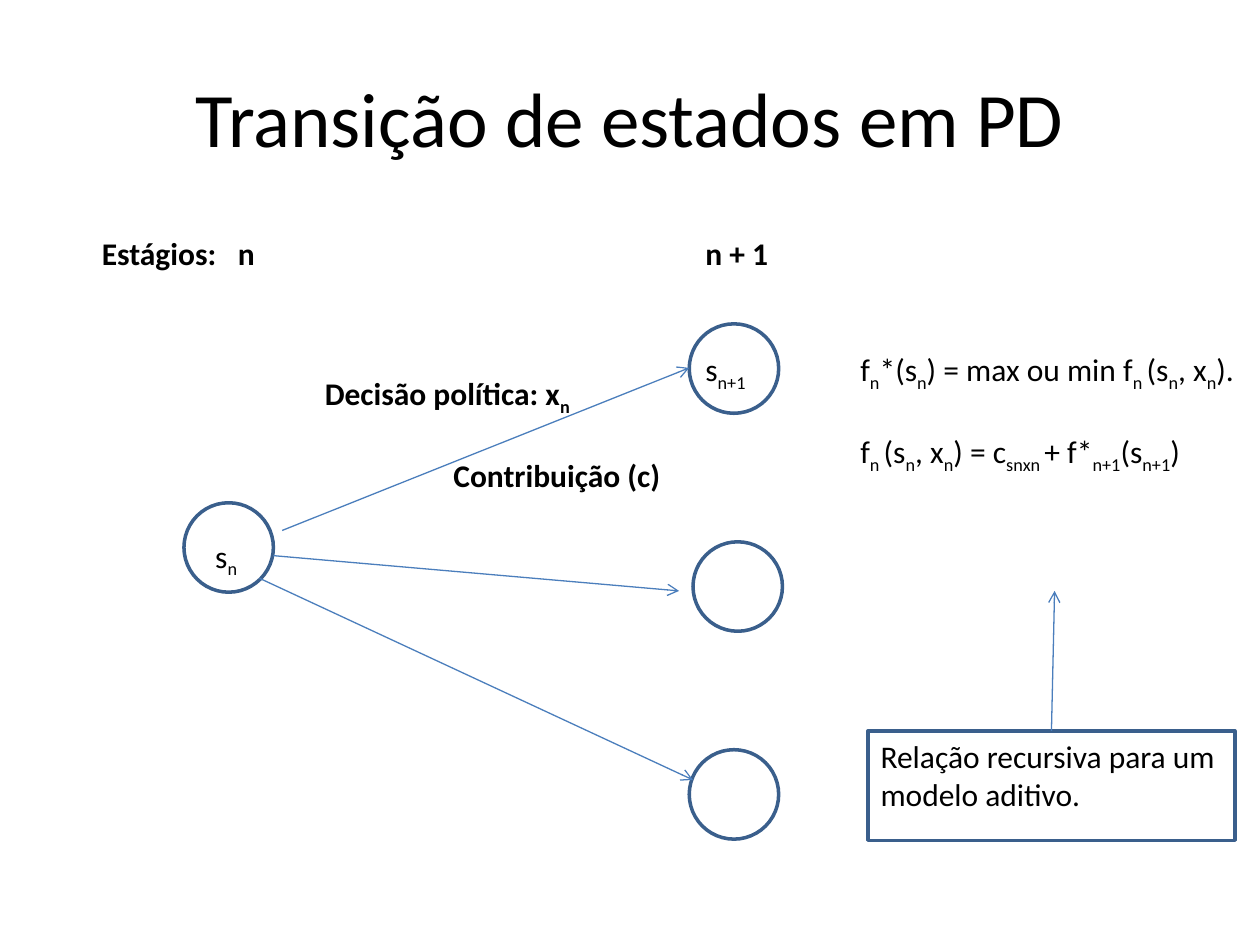
from lxml import etree
from pptx import Presentation
from pptx.dml.color import RGBColor
from pptx.enum.shapes import MSO_CONNECTOR, MSO_SHAPE
from pptx.enum.text import MSO_ANCHOR, PP_ALIGN
from pptx.oxml.ns import qn
from pptx.util import Inches, Pt

STRAIGHT = MSO_CONNECTOR.STRAIGHT
OVAL, RECTANGLE = MSO_SHAPE.OVAL, MSO_SHAPE.RECTANGLE
TOP, MIDDLE = MSO_ANCHOR.TOP, MSO_ANCHOR.MIDDLE
LEFT, CENTER = PP_ALIGN.LEFT, PP_ALIGN.CENTER
BLACK, OUTLINE, ARROW = "000000", "3A5F8C", "4B7EBC"
NODE_SIZE = 0.71


def color(hex_string):
    return RGBColor.from_string(hex_string)


def write(frame, lines, size=18, bold=False, align=LEFT, anchor=TOP):
    """Fill a text frame; every second part between | marks is a subscript."""
    frame.word_wrap = True
    frame.vertical_anchor = anchor
    for index, line in enumerate(lines):
        paragraph = frame.paragraphs[0] if index == 0 else frame.add_paragraph()
        paragraph.alignment = align
        if index:
            paragraph.space_before = Pt(22)
        for part_index, part in enumerate(line.split("|")):
            if not part:
                continue
            run = paragraph.add_run()
            run.text = part
            run.font.name = "Calibri"
            run.font.size = Pt(size)
            run.font.bold = bold
            run.font.color.rgb = color(BLACK)
            if part_index % 2:
                run.font._element.set("baseline", "-25000")


prs = Presentation()
prs.slide_width, prs.slide_height = Inches(10), Inches(7.5)
slide = prs.slides.add_slide(prs.slide_layouts[6])
shapes = slide.shapes

title = shapes.add_textbox(Inches(0.5), Inches(0.3), Inches(9), Inches(1.25))
write(title.text_frame, ["Transição de estados em PD"], 44, align=CENTER, anchor=MIDDLE)

# State nodes and the box that explains the recursion
outlined = [
    (OVAL, 1.46, 3.99, NODE_SIZE, NODE_SIZE),
    (OVAL, 5.47, 5.95, NODE_SIZE, NODE_SIZE),
    (OVAL, 5.5, 4.3, NODE_SIZE, NODE_SIZE),
    (OVAL, 5.47, 2.57, NODE_SIZE, NODE_SIZE),
    (RECTANGLE, 6.89, 5.8, 2.91, 0.87),
]
for kind, left, top, width, height in outlined:
    outline = shapes.add_shape(kind, Inches(left), Inches(top), Inches(width), Inches(height))
    outline.shadow.inherit = False
    outline.fill.background()
    outline.line.color.rgb = color(OUTLINE)
    outline.line.width = Pt(2)
recursion_box = outline
write(recursion_box.text_frame, ["Relação recursiva para um modelo aditivo."])

# Three transitions, then the arrow from the recursion box to the formulas
arrows = [
    (2.24, 4.21, 5.47, 2.92),
    (2.17, 4.41, 5.39, 4.69),
    (2.06, 4.59, 5.5, 6.19),
    (8.35, 5.8, 8.37, 4.69),
]
for ends in arrows:
    arrow = shapes.add_connector(STRAIGHT, *map(Inches, ends))
    arrow.line.color.rgb = color(ARROW)
    arrow.line.width = Pt(0.75)
    etree.SubElement(arrow.line._get_or_add_ln(), qn("a:tailEnd"), type="arrow")
    etree.SubElement(arrow._element.spPr, qn("a:effectLst"))
recursion_arrow = arrow
recursion_arrow.begin_connect(recursion_box, 0)

labels = [
    (1.61, 4.21, 0.55, 0.4, False, ["s|n"]),
    (5.5, 2.73, 0.7, 0.4, False, ["s|n+1"]),
    (2.48, 2.92, 2.36, 0.4, True, ["Decisão política: x|n"]),
    (3.5, 3.57, 2.6, 0.4, True, ["Contribuição (c)"]),
    (6.73, 2.73, 3.27, 1.01, False, [
        "f|n|*(s|n|) = max ou min f|n |(s|n|, x|n|).",
        "f|n |(s|n|, x|n|) = c|snxn |+ f*|n+1|(s|n+1|)",
    ]),
    (0.71, 1.81, 6.54, 0.4, True, ["Estágios:\tn\tn + 1"]),
]
for left, top, width, height, bold, lines in labels:
    label = shapes.add_textbox(Inches(left), Inches(top), Inches(width), Inches(height))
    write(label.text_frame, lines, bold=bold)

# Tab stops place the stage names above their columns
stages = label.text_frame.paragraphs[0]
tab_list = etree.SubElement(stages._p.get_or_add_pPr(), qn("a:tabLst"))
for position in (1.08, 4.79):
    etree.SubElement(tab_list, qn("a:tab"), pos=str(Inches(position)), algn="l")

prs.save("out.pptx")
